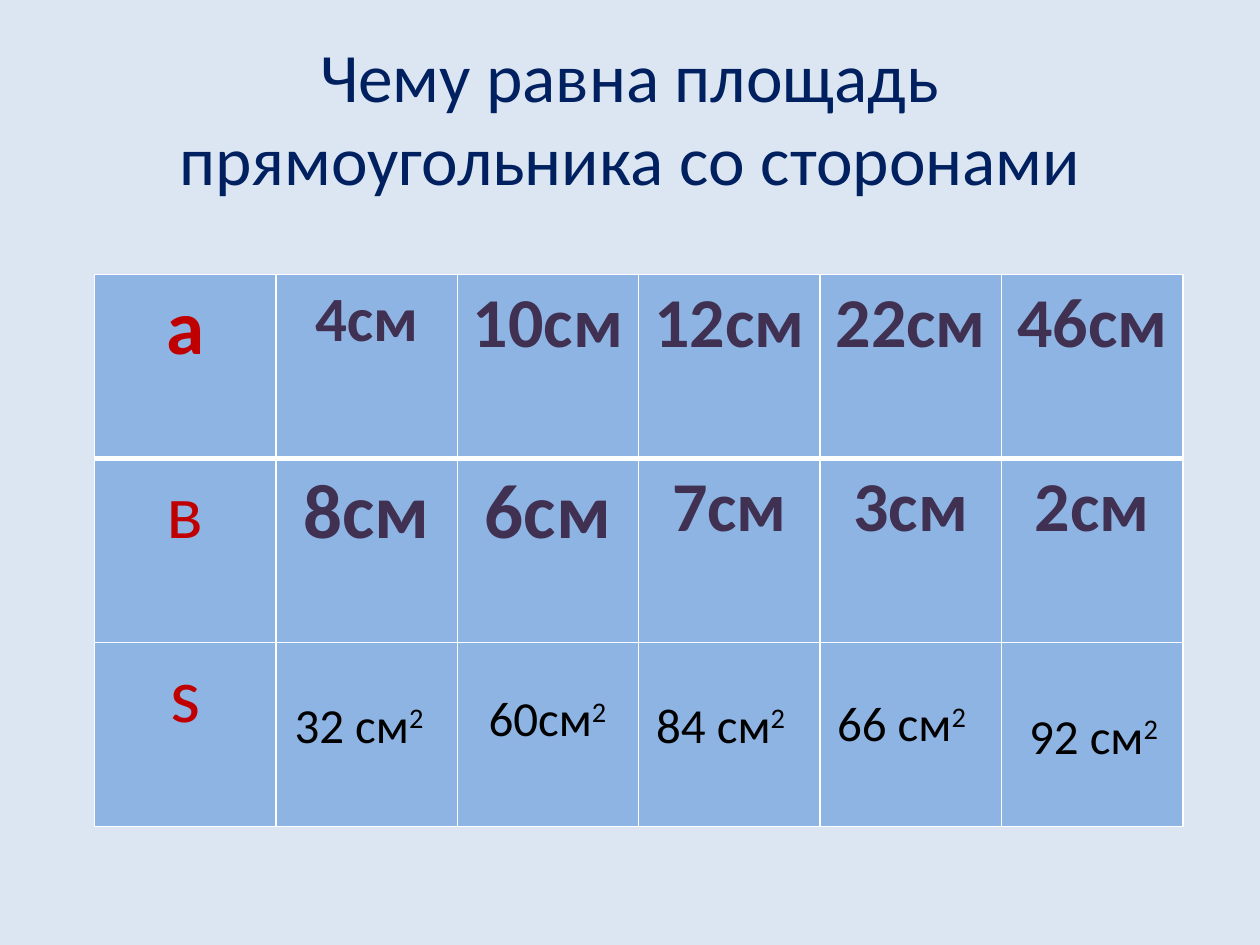
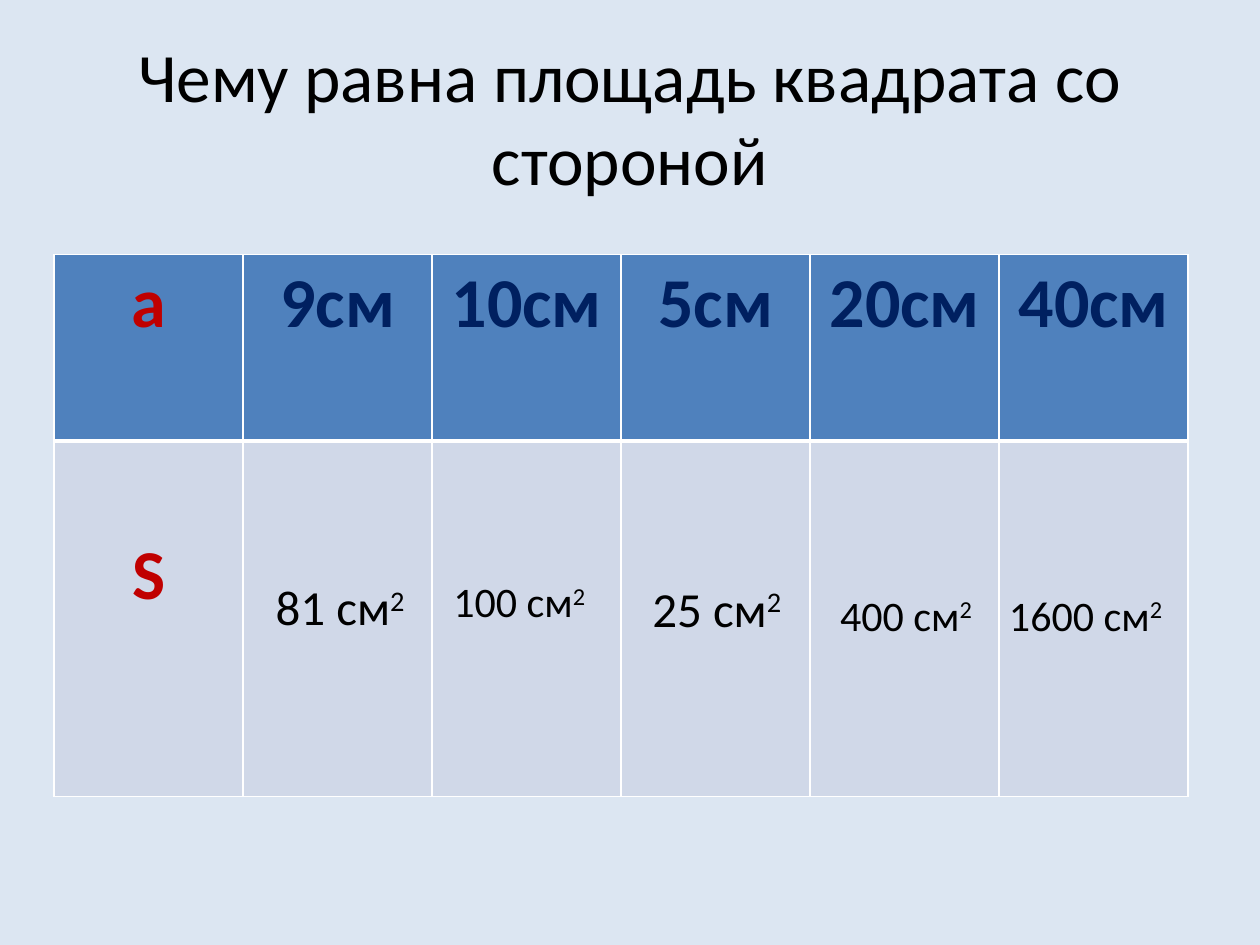
from lxml.etree import SubElement
from pptx import Presentation
from pptx.dml.color import RGBColor
from pptx.enum.text import MSO_ANCHOR, PP_ALIGN
from pptx.oxml.ns import qn
from pptx.util import Inches, Pt

FONT = "Calibri"
BACKGROUND = "DCE6F2"
BLACK, WHITE, RED, NAVY, PLUM = "000000", "FFFFFF", "C00000", "002060", "403152"
SKY, BLUE, PALE = "8EB4E3", "4F81BD", "D0D8E8"


def color(hex_code):
    return RGBColor.from_string(hex_code)


def write(frame, text, size, ink=BLACK, bold=False, align=PP_ALIGN.CENTER,
          power="", spacing=None, after=None):
    """Fill the frame with one paragraph; power is set as a superscript."""
    frame.word_wrap = True
    paragraph = frame.paragraphs[0]
    paragraph.alignment = align
    if spacing:
        paragraph.line_spacing = spacing
    if after:
        paragraph.space_after = Pt(after)
    for part in filter(None, (text, power)):
        run = paragraph.add_run()
        run.text = part
        run.font.name = FONT
        run.font.size = Pt(size)
        run.font.bold = bold
        run.font.color.rgb = color(ink)
    if power:
        run._r.get_or_add_rPr().set("baseline", "30000")


def draw_borders(cell, bottom):
    properties = cell._tc.get_or_add_tcPr()
    for side, width in (("L", 1), ("R", 1), ("T", 1), ("B", bottom)):
        line = SubElement(properties, qn(f"a:ln{side}"), w=str(Pt(width)))
        fill = SubElement(line, qn("a:solidFill"))
        SubElement(fill, qn("a:srgbClr"), val=WHITE)


class Lesson:
    def __init__(self):
        self.deck = Presentation()
        self.deck.slide_width = Inches(10)
        self.deck.slide_height = Inches(7.5)
        self.slide = None

    def start_slide(self, title, ink):
        self.slide = self.deck.slides.add_slide(self.deck.slide_layouts[6])
        fill = self.slide.background.fill
        fill.solid()
        fill.fore_color.rgb = color(BACKGROUND)
        frame = self.text_frame(0.5, 0.3, 9, 1.25)
        frame.vertical_anchor = MSO_ANCHOR.MIDDLE
        write(frame, title, 39.6, ink)

    def text_frame(self, left, top, width, height):
        box = self.slide.shapes.add_textbox(
            Inches(left), Inches(top), Inches(width), Inches(height))
        return box.text_frame

    def table(self, left, top, column_width, heights, fills, rows, ink):
        """Each row is a list of (text, size, bold); the first column is red."""
        columns = len(rows[0])
        table = self.slide.shapes.add_table(
            len(rows), columns, Inches(left), Inches(top),
            Inches(column_width * columns), Inches(sum(heights))).table
        table.horz_banding = False
        for column in table.columns:
            column.width = Inches(column_width)
        for r, (height, fill, row) in enumerate(zip(heights, fills, rows)):
            table.rows[r].height = Inches(height)
            for c, (text, size, bold) in enumerate(row):
                cell = table.cell(r, c)
                draw_borders(cell, bottom=1 if r else 3)
                if r == 1:
                    draw_top_rule(cell)
                cell.fill.solid()
                cell.fill.fore_color.rgb = color(fill)
                write(cell.text_frame, text, size, ink if c else RED, bold)
        return table

    def area(self, number, left, top, width, height=1.25, size=28,
             centered=False):
        """Put an area in square centimetres over its table cell."""
        frame = self.text_frame(left, top, width, height)
        if centered:
            write(frame, number, size, power="2")
        else:
            write(frame, number, size, power="2", align=PP_ALIGN.LEFT,
                  spacing=1.15, after=10)


def draw_top_rule(cell):
    """Match the heavy line under the heading row."""
    cell._tc.tcPr.find(qn("a:lnT")).set("w", str(Pt(3)))


def bold_row(*items):
    return [(text, size, True) for text, size in items]


def empty_row(label, size, bold):
    return [(label, size, bold)] + [("", size, False)] * 5


def rectangle_slide(lesson):
    lesson.start_slide("Чему равна площадь прямоугольника со сторонами", NAVY)
    lengths = bold_row(("а", 44), ("4см", 36), ("10см", 40), ("12см", 40),
                       ("22см", 40), ("46см", 40))
    widths = [("в", 44, False)] + bold_row(
        ("8см", 44), ("6см", 44), ("7см", 40), ("3см", 40), ("2см", 40))
    lesson.table(0.75, 2.18, 1.44, [1.46] * 3, [SKY] * 3,
                 [lengths, widths, empty_row("s", 44, False)], PLUM)
    lesson.area("32 см", 2.24, 5.39, 1.34)
    lesson.area("60см", 3.56, 5.41, 1.57, 1.04, centered=True)
    lesson.area("84 см", 5.11, 5.39, 1.36)
    lesson.area("66 см", 6.47, 5.45, 1.37, 1.04, centered=True)
    lesson.area("92 см", 8.07, 5.48, 1.26)


def square_slide(lesson):
    lesson.start_slide("Чему равна площадь квадрата со стороной", BLACK)
    sides = [(text, 40, True)
             for text in ("а", "9см", "10см", "5см", "20см", "40см")]
    table = lesson.table(0.43, 2.02, 1.5, [1.48, 2.82], [BLUE, PALE],
                         [sides, empty_row("S", 40, True)], NAVY)
    table.cell(1, 0).margin_top = Inches(0.73)
    lesson.area("81 см", 2.09, 4.46, 1.26)
    lesson.area("100 см", 3.5, 4.46, 1.34, 0.57, size=24)
    lesson.area("25 см", 5.08, 4.47, 1.26)
    lesson.area("400 см", 6.57, 4.57, 1.26, 0.54, size=24)
    lesson.area("1600 см", 7.91, 4.57, 1.5, 1.11, size=24)


def main():
    lesson = Lesson()
    rectangle_slide(lesson)
    square_slide(lesson)
    lesson.deck.save("out.pptx")


if __name__ == "__main__":
    main()
